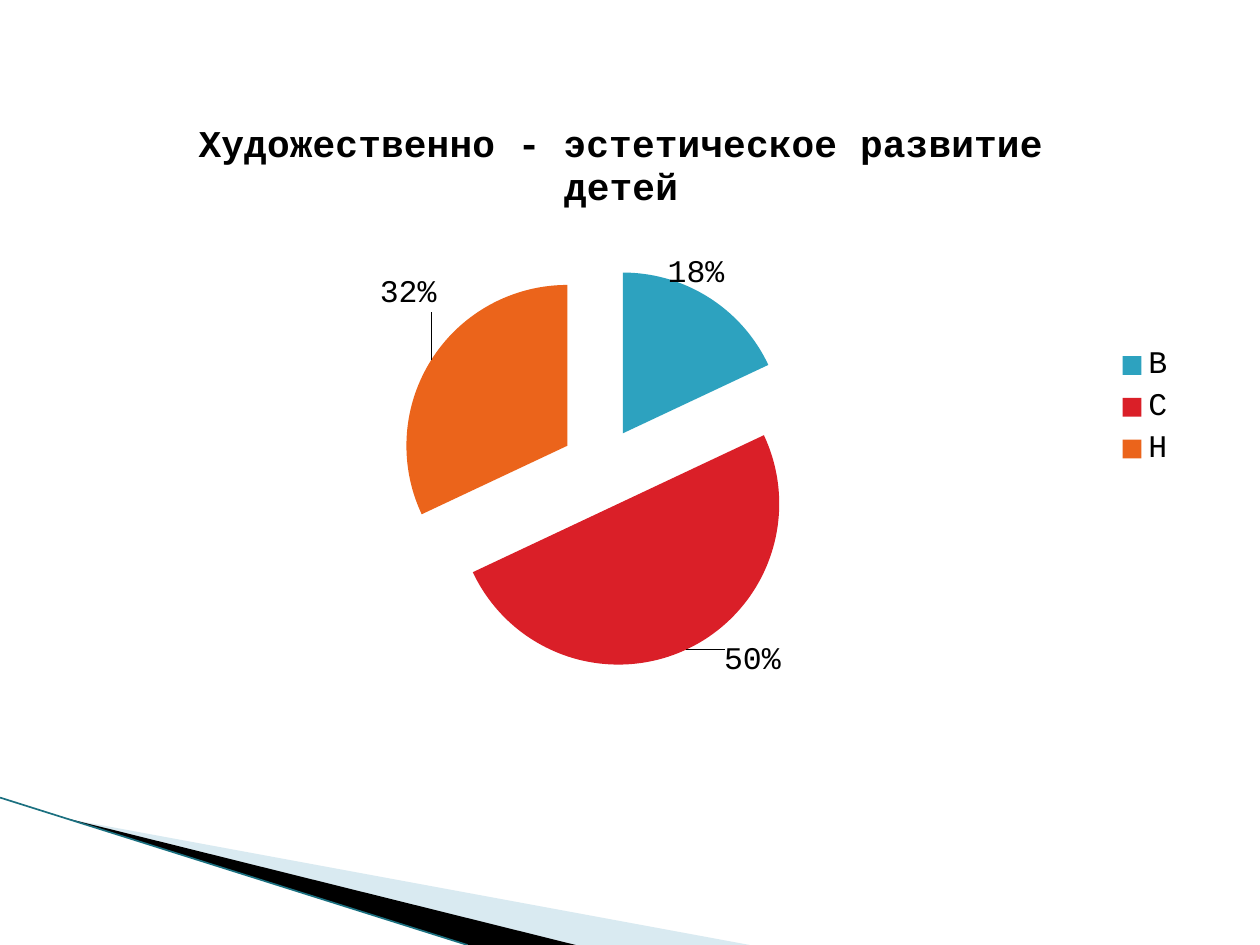
from dataclasses import dataclass

from lxml.etree import SubElement
from pptx import Presentation
from pptx.chart.data import CategoryChartData
from pptx.dml.color import RGBColor
from pptx.enum.chart import XL_CHART_TYPE as ChartType
from pptx.enum.chart import XL_LABEL_POSITION as LabelPosition
from pptx.enum.chart import XL_LEGEND_POSITION as LegendPosition
from pptx.enum.shapes import MSO_CONNECTOR as Connector
from pptx.oxml import parse_xml
from pptx.oxml.ns import nsdecls, qn
from pptx.util import Inches, Pt


@dataclass
class Theme:
    font: str = "Courier New"
    text: str = "000000"
    pale: str = "A0CBDC"
    dark: str = "000000"
    edge: str = "1B7080"
    slices: tuple = ("2DA2BF", "DA1F28", "EB641B")
    title_size: float = 21.6
    body_size: float = 18


def rgb(value):
    return RGBColor.from_string(value)


def manual_layout(**values):
    parts = "".join(f'<c:{key} val="{value}"/>' for key, value in values.items())
    return parse_xml(f'<c:layout {nsdecls("c")}><c:manualLayout>{parts}'
                     '</c:manualLayout></c:layout>')


class SlideBuilder:
    """Places elements by shares of the slide's width and height."""

    def __init__(self, deck, theme):
        self.deck, self.theme = deck, theme
        self.page = deck.slides.add_slide(deck.slide_layouts[6])

    def place(self, x, y):
        return int(x * self.deck.slide_width), int(y * self.deck.slide_height)

    def wedge(self, points, color, opacity=100):
        start, *rest = [self.place(*point) for point in points]
        builder = self.page.shapes.build_freeform(*start)
        builder.add_line_segments(rest, close=True)
        shape = builder.convert_to_shape()
        shape.shadow.inherit = False
        shape.line.fill.background()
        shape.fill.solid()
        shape.fill.fore_color.rgb = rgb(color)
        if opacity < 100:
            tone = shape.fill._xPr.find(".//" + qn("a:srgbClr"))
            SubElement(tone, qn("a:alpha")).set("val", str(opacity * 1000))

    def line(self, start, end, color, width):
        line = self.page.shapes.add_connector(
            Connector.STRAIGHT, *self.place(*start), *self.place(*end))
        line.line.color.rgb = rgb(color)
        line.line.width = Pt(width)
        SubElement(line._element.spPr, qn("a:effectLst"))

    def style(self, font, size, bold=False):
        font.name, font.size, font.bold = self.theme.font, Pt(size), bold
        font.color.rgb = rgb(self.theme.text)

    def pie(self, corner, size, title, shares, label_shifts, plot_box, explosion):
        data = CategoryChartData(number_format="0%")
        data.categories = list(shares)
        data.add_series(title, list(shares.values()))
        chart = self.page.shapes.add_chart(
            ChartType.PIE, *self.place(*corner), *self.place(*size), data).chart
        self.style(chart.font, self.theme.body_size)

        # Title and legend
        chart.has_title = True
        frame = chart.chart_title.text_frame
        frame.text = title
        self.style(frame.paragraphs[0].font, self.theme.title_size, bold=True)
        chart.chart_title.include_in_layout = False
        chart.has_legend = True
        chart.legend.position = LegendPosition.RIGHT
        chart.legend.include_in_layout = False

        # Slices with shifted labels
        chart.plots[0].vary_by_categories = True
        series = chart.plots[0].series[0]
        labels = series.data_labels
        labels.show_value = True
        labels.number_format, labels.number_format_is_linked = "0%", False
        labels.position = LabelPosition.OUTSIDE_END
        self.style(labels.font, self.theme.body_size)
        for index, (color, shift) in enumerate(zip(self.theme.slices, label_shifts)):
            point = series.points[index]
            point.format.fill.solid()
            point.format.fill.fore_color.rgb = rgb(color)
            point.data_label.position = LabelPosition.OUTSIDE_END
        for label, (x, y) in zip(series._element.iter(qn("c:dLbl")), label_shifts):
            label.insert(1, manual_layout(x=x, y=y))
        series._element.find(qn("c:dPt")).addprevious(
            parse_xml(f'<c:explosion {nsdecls("c")} val="{explosion}"/>'))

        # Plot area
        area = chart._chartSpace.find(".//" + qn("c:plotArea"))
        for layout in area.findall(qn("c:layout")):
            area.remove(layout)
        x, y, w, h = plot_box
        area.insert(0, manual_layout(layoutTarget="inner", xMode="edge",
                                     yMode="edge", x=x, y=y, w=w, h=h))


def main():
    deck = Presentation()
    deck.slide_width, deck.slide_height = Inches(10), Inches(7.5)
    theme = Theme()
    slide = SlideBuilder(deck, theme)

    # Corner decoration
    slide.wedge([(0.055, 0.867), (0.595, 1), (0.456, 1)], theme.pale, opacity=40)
    slide.wedge([(0.053, 0.866), (0.457, 1), (0.372, 1)], theme.dark)
    slide.line((0, 0.844), (0.371, 1), theme.edge, 0.95)

    # Pie chart
    slide.pie(
        corner=(0.043, 0.101), size=(0.9, 0.66),
        title="Художественно - эстетическое развитие детей",
        shares={"В": 0.18, "С": 0.5, "Н": 0.32},
        label_shifts=[(-0.04, 0), (0.03, -0.02), (0.01, -0.07)],
        plot_box=(0.305, 0.274, 0.355, 0.645), explosion=25)

    deck.save("out.pptx")


if __name__ == "__main__":
    main()
